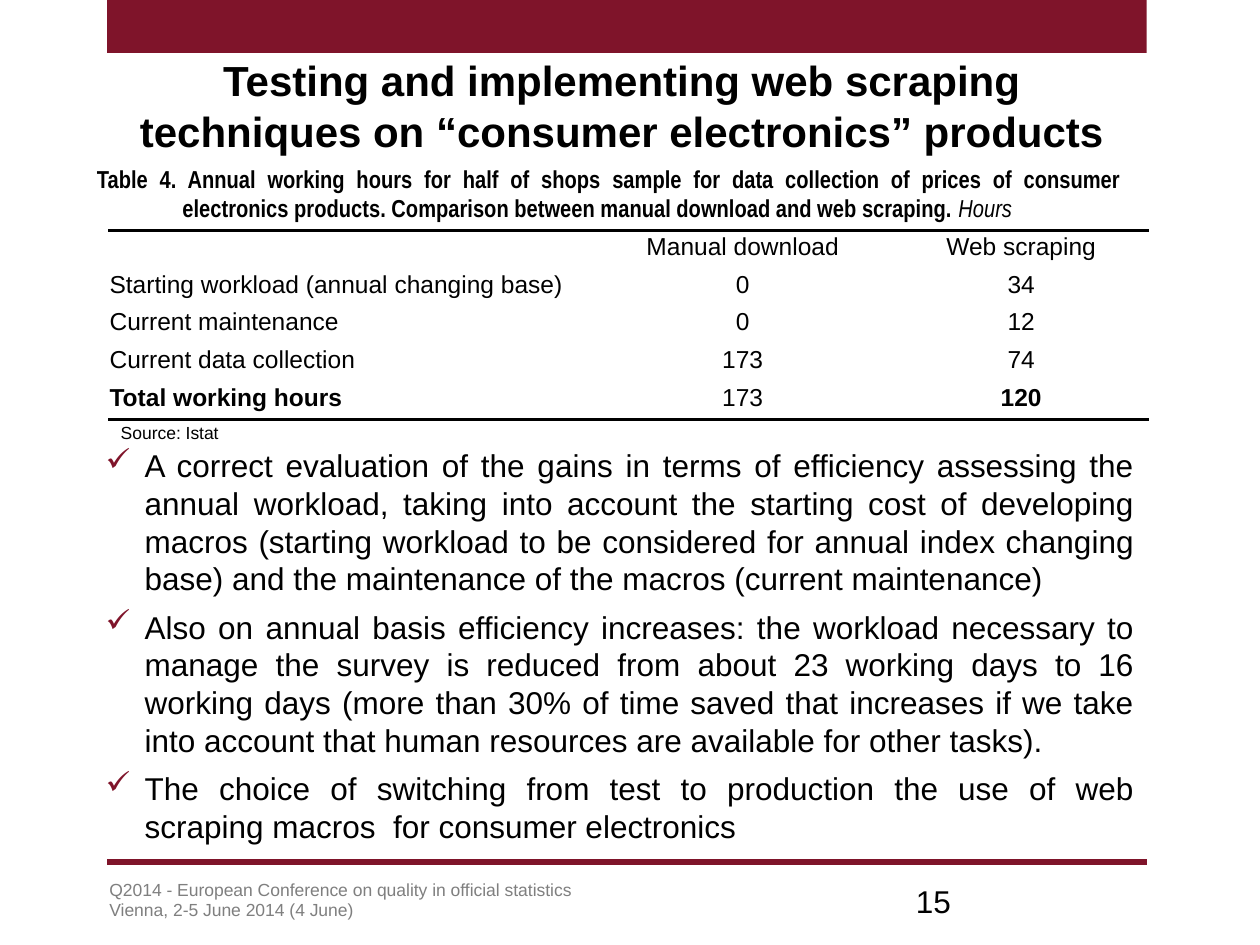
from dataclasses import dataclass

from lxml.etree import SubElement
from pptx import Presentation
from pptx.dml.color import RGBColor
from pptx.enum.shapes import MSO_CONNECTOR, MSO_SHAPE
from pptx.enum.text import MSO_ANCHOR, PP_ALIGN
from pptx.oxml.ns import qn
from pptx.slide import Slide
from pptx.table import _Cell
from pptx.util import Emu, Pt

PX = 9144
BURGUNDY = RGBColor(0x7F, 0x14, 0x2A)
GRAY = RGBColor(0x7F, 0x7F, 0x7F)
BLACK = RGBColor(0, 0, 0)
WHITE = RGBColor(255, 255, 255)

TITLE = "Testing and implementing web scraping techniques on “consumer electronics” products"
CAPTION = (
    "Table 4. Annual working hours for half of shops sample for data collection of prices "
    "of consumer electronics products. Comparison between manual download and web scraping. "
)
HOURS = (
    ("", "Manual download", "Web scraping"),
    ("Starting workload (annual changing base)", "0", "34"),
    ("Current maintenance", "0", "12"),
    ("Current data collection", "173", "74"),
    ("Total working hours", "173", "120"),
)
BOLD_TEXTS = ("Total working hours", "120")
COLUMN_WIDTHS = (384, 239, 203)
ROW_HEIGHT = 30
FINDINGS = (
    "A correct evaluation of the gains in terms of efficiency assessing the annual workload, "
    "taking into account the starting cost of developing macros (starting workload to be "
    "considered for annual index changing base) and the maintenance of the macros "
    "(current maintenance)",
    "Also on annual basis efficiency increases: the workload necessary to manage the survey "
    "is reduced from about 23 working days to 16 working days (more than 30% of time saved "
    "that increases if we take into account that human resources are available for other tasks).",
    "The choice of switching from test to production the use of web scraping macros  "
    "for consumer electronics",
)


@dataclass(frozen=True)
class Box:
    """Position and size in px."""

    left: int
    top: int
    width: int
    height: int

    def emu(self) -> tuple[Emu, ...]:
        """Return the four lengths in EMU."""
        return tuple(Emu(n * PX) for n in (self.left, self.top, self.width, self.height))


@dataclass(frozen=True)
class TextBlock:
    """A text box whose paragraphs share one format."""

    box: Box
    texts: tuple[str, ...]
    size: int
    color: RGBColor = BLACK
    font: str = "Arial"
    bold: bool = False
    align: PP_ALIGN = PP_ALIGN.LEFT
    hanging: int = 0
    bullet: str = ""
    space_before: int = 0


def style(paragraph, size: int, color: RGBColor = BLACK, bold: bool = False, name: str = "Arial") -> None:
    """Set the font of a paragraph."""
    font = paragraph.font
    font.name, font.size, font.bold = name, Pt(size), bold
    font.color.rgb = color


def add_text(slide: Slide, block: TextBlock) -> list:
    """Add a text block and return its paragraphs."""
    frame = slide.shapes.add_textbox(*block.box.emu()).text_frame
    frame.word_wrap = True
    frame.text = "\n".join(block.texts)
    for index, paragraph in enumerate(frame.paragraphs):
        paragraph.alignment = block.align
        if index and block.space_before:
            paragraph.space_before = Pt(block.space_before)
        properties = paragraph._p.get_or_add_pPr()
        if block.hanging:
            properties.set("marL", str(block.hanging * PX))
            properties.set("indent", str(-block.hanging * PX))
        if block.bullet:
            color = SubElement(properties, qn("a:buClr"))
            SubElement(color, qn("a:srgbClr"), val=str(BURGUNDY))
            SubElement(properties, qn("a:buChar"), char=block.bullet)
        style(paragraph, block.size, block.color, block.bold, block.font)
    return list(frame.paragraphs)


def add_frame(slide: Slide) -> None:
    """Add the top bar and the footer rule."""
    bar = slide.shapes.add_shape(MSO_SHAPE.RECTANGLE, *Box(85, 0, 825, 42).emu())
    bar.shadow.inherit = False
    bar.fill.solid()
    bar.fill.fore_color.rgb = BURGUNDY
    bar.line.fill.background()
    rule = slide.shapes.add_connector(
        MSO_CONNECTOR.STRAIGHT, *(Emu(n * PX) for n in (85, 684, 910, 684))
    )
    rule.line.color.rgb = BURGUNDY
    rule.line.width = Pt(3.35)
    SubElement(rule._element.spPr, qn("a:effectLst"))


def set_borders(cell: _Cell, visible: str) -> None:
    """Draw one named border of a cell and clear the others."""
    properties = cell._tc.get_or_add_tcPr()
    for index, edge in enumerate(("lnL", "lnR", "lnT", "lnB")):
        line = SubElement(properties, qn(f"a:{edge}"), w=str(Pt(2)))
        properties.insert(index, line)
        if edge == visible:
            fill = SubElement(line, qn("a:solidFill"))
            SubElement(fill, qn("a:srgbClr"), val=str(BLACK))
        else:
            SubElement(line, qn("a:noFill"))


def add_hours_table(slide: Slide) -> None:
    """Add the table of working hours."""
    box = Box(86, 183, sum(COLUMN_WIDTHS), ROW_HEIGHT * len(HOURS))
    table = slide.shapes.add_table(len(HOURS), len(COLUMN_WIDTHS), *box.emu()).table
    table.first_row = table.horz_banding = False
    for column, width in zip(table.columns, COLUMN_WIDTHS):
        column.width = Emu(width * PX)
    edges = {0: "lnT", len(HOURS) - 1: "lnB"}
    for row_index, row in enumerate(HOURS):
        for column_index, text in enumerate(row):
            cell = table.cell(row_index, column_index)
            cell.text = text
            cell.fill.solid()
            cell.fill.fore_color.rgb = WHITE
            cell.vertical_anchor = MSO_ANCHOR.MIDDLE
            cell.margin_left = cell.margin_right = cell.margin_top = Emu(PX)
            cell.margin_bottom = 0
            paragraph = cell.text_frame.paragraphs[0]
            paragraph.alignment = PP_ALIGN.CENTER if column_index else PP_ALIGN.JUSTIFY
            paragraph.line_spacing = Pt(12)
            style(paragraph, 14, bold=text in BOLD_TEXTS)
            set_borders(cell, edges.get(row_index, ""))


def add_title(slide: Slide) -> None:
    """Place and format the title."""
    title = slide.shapes.title
    title.left, title.top, title.width, title.height = Box(75, 40, 837, 87).emu()
    title.text_frame.text = TITLE
    title.text_frame.vertical_anchor = MSO_ANCHOR.MIDDLE
    paragraph = title.text_frame.paragraphs[0]
    paragraph.alignment = PP_ALIGN.CENTER
    style(paragraph, 24, bold=True)


def main() -> None:
    """Build and save the slide."""
    presentation = Presentation()
    presentation.slide_width, presentation.slide_height = Emu(1000 * PX), Emu(750 * PX)
    slide = presentation.slides.add_slide(presentation.slide_layouts[5])
    add_frame(slide)
    add_title(slide)
    footer = ("Q2014 - European Conference on quality in official statistics", "Vienna, 2-5 June 2014 (4 June)")
    add_text(slide, TextBlock(Box(77, 697, 766, 39), footer, 10, GRAY))[0].line_spacing = 0.7
    add_text(slide, TextBlock(Box(717, 695, 233, 40), ("15",), 18))
    add_text(slide, TextBlock(Box(86, 330, 151, 27), ("Source: Istat",), 10))
    add_hours_table(slide)
    caption = TextBlock(
        Box(67, 125, 833, 57), (CAPTION,), 14, font="Arial Narrow", bold=True,
        align=PP_ALIGN.JUSTIFY, hanging=68,
    )
    unit = add_text(slide, caption)[0].add_run()
    unit.text = "Hours"
    unit.font.bold, unit.font.italic = False, True
    add_text(slide, TextBlock(
        Box(74, 349, 836, 330), FINDINGS, 18, align=PP_ALIGN.JUSTIFY,
        hanging=31, bullet="✓", space_before=6,
    ))
    presentation.save("out.pptx")


if __name__ == "__main__":
    main()
